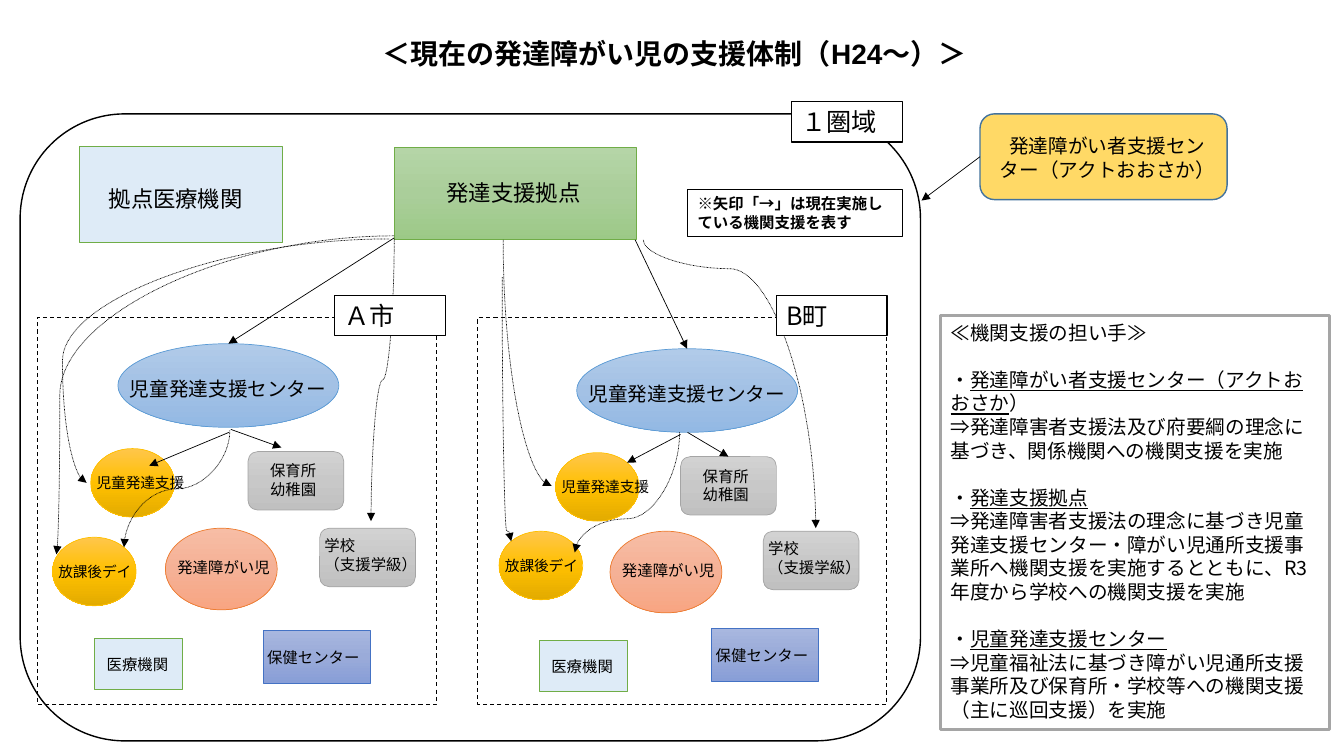
from copy import deepcopy
from dataclasses import dataclass

from pptx import Presentation
from pptx.dml.color import RGBColor
from pptx.enum.dml import MSO_LINE as Dash
from pptx.enum.shapes import MSO_CONNECTOR as Connector, MSO_SHAPE as Shape
from pptx.enum.text import MSO_ANCHOR as Anchor, PP_ALIGN as Align
from pptx.oxml.ns import qn
from pptx.oxml.xmlchemy import OxmlElement
from pptx.util import Pt

EMU_PER_PX = 9144  # 100 px to the inch


@dataclass(frozen=True)
class Theme:
    font: str = "Noto Sans CJK JP"
    title_font: str = "Arial"
    title: float = 20
    area: float = 18
    hub: float = 16
    body: float = 14
    label: float = 11
    small: float = 10.5
    heading_gap: float = 17
    black: str = "000000"
    white: str = "FFFFFF"
    grey: str = "A5A5A5"
    green: str = "70AD47"
    pale_blue: str = "DEEBF7"
    yellow: str = "FFD966"
    navy: str = "43739E"
    blue: str = "5B9BD5"
    orange: str = "ED7D31"
    gold: str = "FFC000"
    indigo: str = "4472C4"
    green_fade: tuple = ("B5D5A7", "AACE9A", "9CC987")
    blue_fade: tuple = ("B1CBE9", "A3C1E5", "93B9E4")
    orange_fade: tuple = ("F7BDA5", "F5B196", "F8A582")
    gold_fade: tuple = ("FFC64B", "FFC000", "E3AB00")
    grey_fade: tuple = ("D2D2D2", "C8C8C8", "C0C0C0")
    indigo_fade: tuple = ("A8B7DF", "9AABD9", "889ED7")


THEME = Theme()

# kind: shape, size, fill, line, text, text size, text offset, text width
NODES = {
    "child": (Shape.OVAL, (111, 81), THEME.orange_fade, THEME.orange,
              ["発達障がい児"], THEME.label, (2, 25), 161),
    "school": (Shape.ROUNDED_RECTANGLE, (95, 58), THEME.grey_fade, THEME.grey,
               ["学校", "（支援学級）"], THEME.label, (-5, 3), 113),
    "support": (Shape.OVAL, (83, 68), THEME.gold_fade, THEME.gold,
                ["児童発達支援"], THEME.small, (-4, 20), 139),
    "after_school": (Shape.OVAL, (83, 68), THEME.gold_fade, THEME.gold,
                     ["放課後デイ"], THEME.small, (-4, 20), 139),
    "nursery": (Shape.ROUNDED_RECTANGLE, (95, 58), THEME.grey_fade, THEME.grey,
                ["保育所", "幼稚園"], THEME.label, (12, 5), 89),
    "clinic": (Shape.RECTANGLE, (87, 51), THEME.pale_blue, THEME.green,
               ["医療機関"], THEME.label, (2, 12), 127),
    "health": (Shape.RECTANGLE, (106, 53), THEME.indigo_fade, THEME.indigo,
               ["保健センター"], THEME.label, (-6, 13), 131),
    "center": (Shape.OVAL, (219, 83), THEME.blue_fade, THEME.blue,
               ["児童発達支援センター"], THEME.body, (2, 28), 236),
}

TOWN_A = {"child": (164, 524), "school": (317, 524), "support": (90, 445),
          "after_school": (52, 533), "nursery": (246, 448), "clinic": (94, 633),
          "health": (261, 625), "center": (117, 341)}
TOWN_B = {"child": (605, 527), "school": (757, 527), "support": (551, 449),
          "after_school": (495, 527), "nursery": (675, 453), "clinic": (535, 635),
          "health": (706, 623), "center": (572, 346)}

PROVIDERS = [
    "≪機関支援の担い手≫",
    ("・", "発達障がい者支援センター（アクトおおさか", "）"),
    "⇒発達障害者支援法及び府要綱の理念に基づき、関係機関への機関支援を実施",
    ("・", "発達支援拠点"),
    "⇒発達障害者支援法の理念に基づき児童発達支援センター・障がい児通所支援事業所へ"
    "機関支援を実施するとともに、R3年度から学校への機関支援を実施",
    ("・", "児童発達支援センター"),
    "⇒児童福祉法に基づき障がい児通所支援事業所及び保育所・学校等への機関支援"
    "（主に巡回支援）を実施",
]


def px(*lengths):
    return [round(length * EMU_PER_PX) for length in lengths]


def write_text(shape, paragraphs, size=THEME.body, bold=False, align=Align.LEFT,
               anchor=Anchor.TOP, latin=THEME.font, line_spacing=None):
    """Write paragraphs; a tuple is a heading whose second piece is underlined."""
    frame = shape.text_frame
    frame.word_wrap = True
    frame.vertical_anchor = anchor
    for index, content in enumerate(paragraphs):
        paragraph = frame.add_paragraph() if index else frame.paragraphs[0]
        paragraph.alignment = align
        paragraph.line_spacing = line_spacing
        heading = isinstance(content, tuple)
        if heading:
            paragraph.space_before = Pt(THEME.heading_gap)
        for place, piece in enumerate(content if heading else (content,)):
            run = paragraph.add_run()
            run.text = piece
            run.font.size, run.font.bold = Pt(size), bold
            run.font.underline = place == 1
            run.font.color.rgb = RGBColor.from_string(THEME.black)
            run.font.name = latin
            east_asian = OxmlElement("a:ea")
            east_asian.set("typeface", THEME.font)
            run.font._element.append(east_asian)


def add_label(slide, box, paragraphs, **text_format):
    write_text(slide.shapes.add_textbox(*px(*box)), paragraphs, **text_format)


def fade(shape, colours):
    shape.fill.gradient()
    shape.fill.gradient_angle = 270
    stops = shape._element.spPr.find(qn("a:gradFill")).find(qn("a:gsLst"))
    stops.append(deepcopy(stops[0]))
    for stop, colour, position in zip(shape.fill.gradient_stops, colours, (0, 0.5, 1)):
        stop.color.rgb = RGBColor.from_string(colour)
        stop.position = position


def add_box(slide, kind, box, fill=None, line=THEME.black, width=0.5, dash=None):
    shape = slide.shapes.add_shape(kind, *px(*box))
    shape.shadow.inherit = False
    if fill is None:
        shape.fill.background()
    elif isinstance(fill, tuple):
        fade(shape, fill)
    else:
        shape.fill.solid()
        shape.fill.fore_color.rgb = RGBColor.from_string(fill)
    shape.line.color.rgb = RGBColor.from_string(line)
    shape.line.width = Pt(width)
    shape.line.dash_style = dash
    return shape


def add_arrow(slide, start, end, kind=Connector.STRAIGHT, dash=None):
    arrow = slide.shapes.add_connector(kind, *px(*start, *end))
    arrow.line.color.rgb = RGBColor.from_string(THEME.black)
    arrow.line.width = Pt(0.5)
    arrow.line.dash_style = dash
    tip = OxmlElement("a:tailEnd")
    tip.set("type", "triangle")
    arrow.line._get_or_add_ln().append(tip)
    arrow._element.spPr.append(OxmlElement("a:effectLst"))
    return arrow


def add_curve(slide, start, end, bend=0.5, upright=True):
    """Dotted curve; an upright one leaves and arrives vertically; no bend is a quarter turn."""
    turn = 0
    if upright:
        (x1, y1), (x2, y2) = start, end
        turn = 90 if x2 < x1 else 270
        middle_x, middle_y = (x1 + x2) / 2, (y1 + y2) / 2
        reach = (y2 - y1) / 2 * (1 if turn == 90 else -1)
        rise = abs(x2 - x1) / 2
        start = (middle_x - reach, middle_y - rise)
        end = (middle_x + reach, middle_y + rise)
    curve = add_arrow(slide, start, end, Connector.CURVE, Dash.ROUND_DOT)
    properties = curve._element.spPr
    if turn:
        properties.find(qn("a:xfrm")).set("rot", str(turn * 60000))
    geometry = properties.find(qn("a:prstGeom"))
    if bend is None:
        geometry.set("prst", "curvedConnector2")
    else:
        guide = OxmlElement("a:gd")
        guide.set("name", "adj1")
        guide.set("fmla", f"val {round(bend * 100000)}")
        geometry.get_or_add_avLst().append(guide)


def add_town(slide, places):
    """Draw the nodes of one town and return their shapes by kind."""
    shapes = {}
    for kind, (left, top) in places.items():
        form, size, fill, line, text, text_size, (dx, dy), width = NODES[kind]
        shapes[kind] = add_box(slide, form, (left, top, *size), fill, line)
        add_label(slide, (left + dx, top + dy, width, 29), text, size=text_size)
    return shapes


def main():
    presentation = Presentation()
    presentation.slide_width, presentation.slide_height = px(1333, 750)
    slide = presentation.slides.add_slide(presentation.slide_layouts[5])

    # Title
    title = slide.shapes.title
    title.left, title.top, title.width, title.height = px(94, 34, 1150, 42)
    write_text(title, ["＜現在の発達障がい児の支援体制（H24～）＞"], size=THEME.title, bold=True,
               align=Align.CENTER, anchor=Anchor.MIDDLE, latin=THEME.title_font,
               line_spacing=0.9)

    # Area and town frames
    add_box(slide, Shape.ROUNDED_RECTANGLE, (20, 113, 893, 622), THEME.white, width=1)
    for left, width in ((37, 396), (474, 405)):
        add_box(slide, Shape.RECTANGLE, (left, 315, width, 384), width=0.75, dash=Dash.DASH)

    # Area-wide institutions
    adviser = add_box(slide, Shape.ROUNDED_RECTANGLE, (972, 113, 245, 85),
                      THEME.yellow, THEME.navy, 1)
    add_label(slide, (976, 128, 245, 57), ["発達障がい者支援センター（アクトおおさか）"],
              align=Align.CENTER)
    add_box(slide, Shape.RECTANGLE, (391, 146, 240, 92), THEME.green_fade, THEME.green)
    add_label(slide, (433, 173, 244, 37), ["発達支援拠点"], size=THEME.hub)
    add_box(slide, Shape.RECTANGLE, (79, 145, 201, 95), THEME.pale_blue, THEME.green)
    add_label(slide, (98, 179, 200, 37), ["拠点医療機関"], size=THEME.hub)

    # Towns
    town_a = add_town(slide, TOWN_A)
    town_b = add_town(slide, TOWN_B)

    # Dotted support paths
    add_curve(slide, (386, 237), (86, 479), 1.08, upright=False)
    add_curve(slide, (391, 234), (56, 550), 0.99, upright=False)
    for start, end, bend in (((499, 238), (547, 482), None),
                             ((498, 275), (507, 537), 0.96),
                             ((638, 238), (809, 524), 0.1),
                             ((391, 237), (368, 517), 0.5),
                             ((228, 427), (123, 543), 0.5),
                             ((674, 429), (570, 548), 0.72)):
        add_curve(slide, start, end, bend)

    # Solid support arrows
    add_arrow(slide, (972, 156), (914, 199)).begin_connect(adviser, 1)
    add_arrow(slide, (391, 236), (226, 341)).end_connect(town_a["center"], 0)
    add_arrow(slide, (630, 238), (682, 346)).end_connect(town_b["center"], 0)
    add_arrow(slide, (682, 429), (722, 453)).end_connect(town_b["nursery"], 0)
    for start, end in (((675, 431), (622, 459)),
                       ((229, 426), (279, 444)),
                       ((227, 429), (148, 462))):
        add_arrow(slide, start, end)

    # Area and town names
    for left, top, name in ((785, 101, "１圏域"), (332, 293, "Ａ市"), (770, 293, "B町")):
        tag = add_box(slide, Shape.RECTANGLE, (left, top, 110, 40), THEME.white, width=1)
        write_text(tag, [name], size=THEME.area)

    # Arrow note and list of providers
    note = add_box(slide, Shape.RECTANGLE, (682, 188, 213, 47), width=0.75)
    write_text(note, ["※矢印「→」は現在実施している機関支援を表す"], size=THEME.label, bold=True)
    providers = add_box(slide, Shape.RECTANGLE, (933, 313, 386, 411),
                        THEME.white, THEME.grey, 2.25)
    write_text(providers, PROVIDERS)

    presentation.save("out.pptx")


if __name__ == "__main__":
    main()
